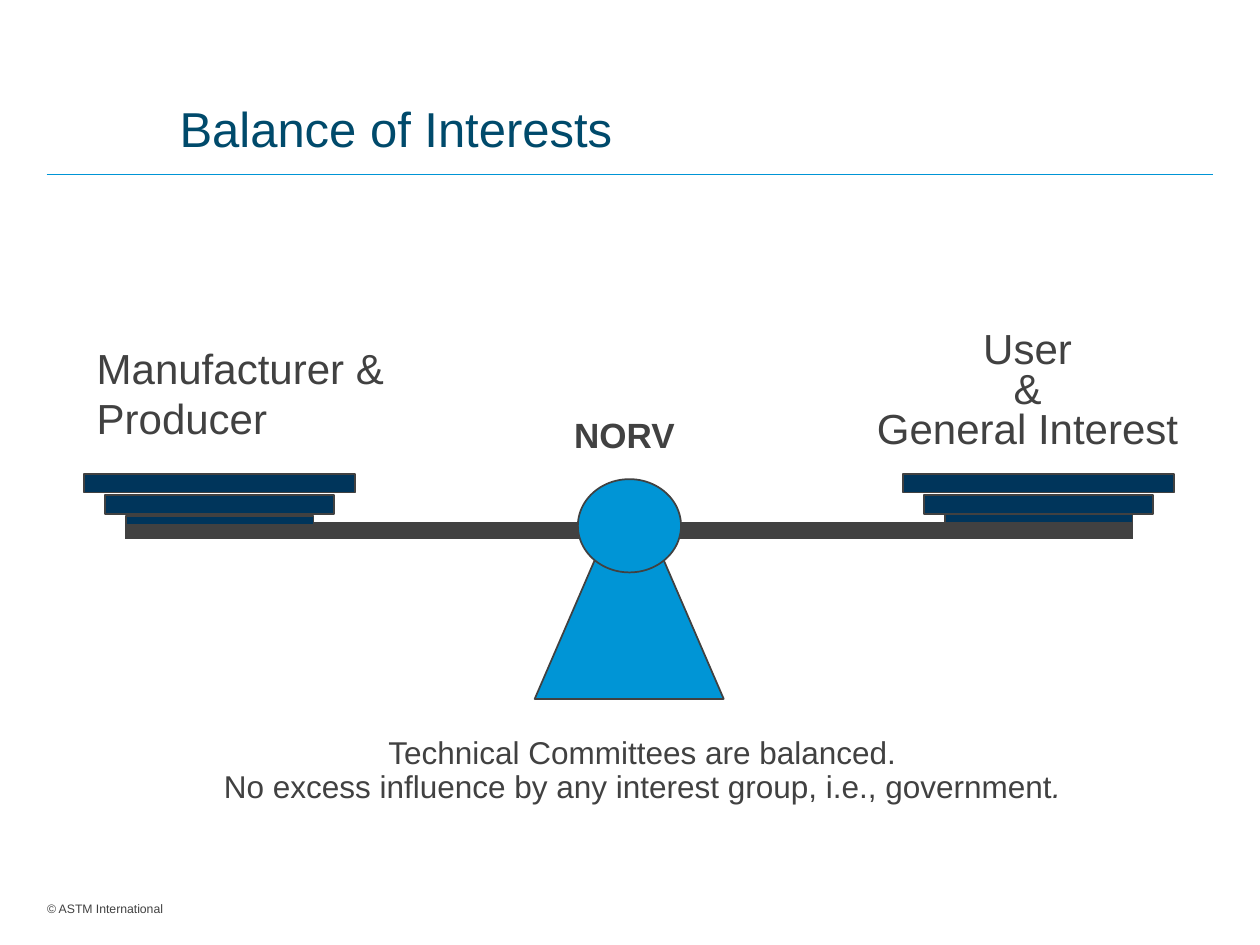
from pptx import Presentation
from pptx import util as u
from pptx.dml.color import RGBColor
from pptx.enum import shapes, text
from pptx.oxml.ns import qn
from lxml import etree

GREY = RGBColor(0x41, 0x41, 0x41)
BLUE = RGBColor(0x00, 0x95, 0xD6)
NAVY = RGBColor(0x00, 0x35, 0x5B)
TEAL = RGBColor(0x00, 0x4A, 0x6B)
LEFT, CENTER = text.PP_ALIGN.LEFT, text.PP_ALIGN.CENTER

TITLE = "Balance of Interests"
LABELS = [
    dict(lines=["Manufacturer &", "Producer"], place=(1.7, 6.77, 6.38, 2.31), size=24),
    dict(lines=["User", "&", "General Interest"], place=(17.39, 6.56, 6.65, 2.72),
         size=24, align=CENTER, spacing=0.8),
    dict(lines=["NORV"], place=(11.32, 8.2, 2.54, 1.12), size=20, align=CENTER, bold=True),
]
FOOTER = dict(lines=["© ASTM International"], place=(0.95, 18.16, 2.87, 0.3), size=7, margins=(0, 0))
STATEMENT = ["Technical Committees are balanced.",
             "No excess influence by any interest group, i.e., government"]
RULES = [((0.94, 24.46), 3.52, BLUE, 0.5), ((2.53, 22.84), 10.7, GREY, 10)]
PANS = [(1.7, 10.41), (18.21, 10.36)]
PAN_WIDTH, PAN_STEP = 5.46, 0.42
STAND = [(12.25, 10.69), (10.78, 14.09), (14.59, 14.09), (13.12, 10.69)]


def cm(*lengths):
    return [u.Cm(length) for length in lengths]


def add_rule(page, ends, top, color, width):
    rule = page.shapes.add_connector(
        shapes.MSO_CONNECTOR.STRAIGHT, *cm(ends[0], top, ends[1], top))
    rule.line.color.rgb = color
    rule.line.width = u.Pt(width)
    etree.SubElement(rule._element.spPr, qn("a:effectLst"))
    rule._element.remove(rule._element.find(qn("p:style")))


def paint(shape, color):
    shape.shadow.inherit = False
    shape.fill.solid()
    shape.fill.fore_color.rgb = color
    shape.line.color.rgb = GREY
    shape.line.width = u.Pt(1)


def set_font(para, size, color=GREY, bold=False):
    para.font.name = "Arial"
    para.font.size = u.Pt(size)
    para.font.color.rgb = color
    para.font.bold = bold


def add_label(page, lines, place, size, align=LEFT, spacing=1.0, bold=False,
              margins=(0.25, 0.13), wrap=False):
    frame = page.shapes.add_textbox(*cm(*place)).text_frame
    frame.word_wrap = wrap
    frame.margin_left = frame.margin_right = u.Cm(margins[0])
    frame.margin_top = frame.margin_bottom = u.Cm(margins[1])
    frame.text = "\n".join(lines)
    for para in frame.paragraphs:
        para.alignment = align
        para.line_spacing = spacing
        set_font(para, size, bold=bold)
    return frame


def add_title(page):
    title = page.shapes.title
    title.left, title.top, title.width, title.height = cm(3.62, 0.84, 21.34, 3.61)
    frame = title.text_frame
    frame.text = TITLE
    frame.auto_size = text.MSO_AUTO_SIZE.NONE
    frame.vertical_anchor = text.MSO_ANCHOR.MIDDLE
    frame.margin_left = frame.margin_right = frame.margin_top = frame.margin_bottom = 0
    para = frame.paragraphs[0]
    para.alignment = LEFT
    para.line_spacing = u.Pt(30)
    set_font(para, 28, TEAL)


def add_scale(page):
    builder = page.shapes.build_freeform(*cm(*STAND[0]))
    builder.add_line_segments([cm(*point) for point in STAND[1:]], close=True)
    paint(builder.convert_to_shape(), BLUE)
    pivot = page.shapes.add_shape(shapes.MSO_SHAPE.OVAL, *cm(11.65, 9.66, 2.08, 1.88))
    paint(pivot, BLUE)
    for left, base in PANS:
        tiers = [(9.55, 0.38), (9.98, 0.38), (base, 0.18)]
        for level, (top, height) in enumerate(tiers):
            inset = level * PAN_STEP
            tier = page.shapes.add_shape(
                shapes.MSO_SHAPE.RECTANGLE,
                *cm(left + inset, top, PAN_WIDTH - 2 * inset, height))
            paint(tier, NAVY)


def add_statement(page):
    frame = add_label(page, STATEMENT[:1], (1.94, 14.73, 22.02, 1.65), 18,
                      align=CENTER, spacing=0.9, wrap=True)
    para = frame.paragraphs[0]
    para.add_line_break()
    para.add_run().text = STATEMENT[1]
    span = para.add_run()
    span.text = "."
    span.font.italic = True


def main():
    deck = Presentation()
    deck.slide_width, deck.slide_height = cm(25.4, 19.05)
    page = deck.slides.add_slide(deck.slide_layouts[5])
    add_title(page)
    for rule in RULES:
        add_rule(page, *rule)
    add_scale(page)
    for label in LABELS + [FOOTER]:
        add_label(page, **label)
    add_statement(page)
    deck.save("out.pptx")


if __name__ == "__main__":
    main()
